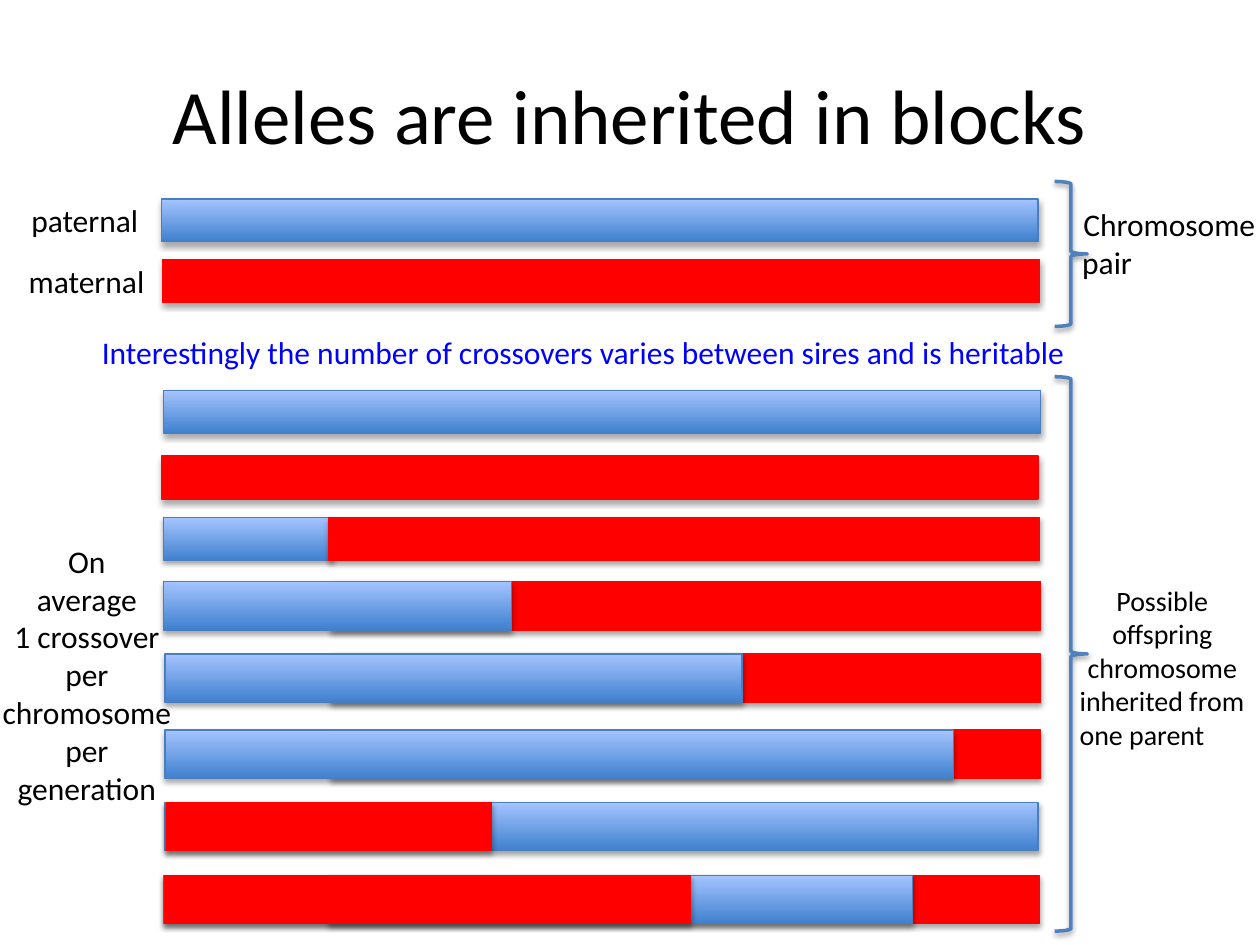
from lxml import etree
from pptx import Presentation
from pptx import util as u
from pptx.dml.color import RGBColor
from pptx.enum import shapes, text
from pptx.oxml.ns import qn

LEFT, CENTER = text.PP_ALIGN.LEFT, text.PP_ALIGN.CENTER
PATERNAL, MATERNAL = "paternal", "maternal"


def colour(hex_code):
    return RGBColor.from_string(hex_code)


class Diagram:
    """Style and current slide; lengths are in a grid of 100 columns by 75 rows."""

    font = "Calibri"
    ink, note = "000000", "0000FF"
    red, blue_edge, brace_line = "FF0000", "4B7EBC", "4F81BD"
    blue_blend = ("3F80CE", "A4C4FF")

    def __init__(self, deck):
        self.column = deck.slide_width / 100
        self.row = deck.slide_height / 75
        self.slide = deck.slides.add_slide(deck.slide_layouts[6])

    def place(self, left, top, width, height):
        return (round(left * self.column), round(top * self.row),
                round(width * self.column), round(height * self.row))

    def cast_shadow(self, shape, opacity, distance):
        """Replace the theme shadow with a soft one falling straight down."""
        shape.shadow.inherit = False
        effects = shape._element.spPr.find(qn("a:effectLst"))
        outer = etree.SubElement(
            effects, qn("a:outerShdw"), blurRad=str(u.Pt(3.1)),
            dist=str(u.Pt(distance)), dir="5400000", rotWithShape="0")
        black = etree.SubElement(outer, qn("a:srgbClr"), val="000000")
        etree.SubElement(black, qn("a:alpha"), val=str(opacity * 1000))

    def segment(self, parent, left, top, width, height):
        bar = self.slide.shapes.add_shape(
            shapes.MSO_SHAPE.RECTANGLE, *self.place(left, top, width, height))
        if parent == PATERNAL:
            bar.fill.gradient()
            bar.fill.gradient_angle = 90
            for stop, shade in zip(bar.fill.gradient_stops, self.blue_blend):
                stop.color.rgb = colour(shade)
            edge = self.blue_edge
        else:
            bar.fill.solid()
            bar.fill.fore_color.rgb = colour(self.red)
            edge = self.red
        bar.line.color.rgb = colour(edge)
        bar.line.width = u.Pt(0.75)
        self.cast_shadow(bar, 35, 1.8)

    def chromosome(self, top, height, *segments):
        for parent, left, width in segments:
            self.segment(parent, left, top, width, height)

    def brace(self, top, height):
        brace = self.slide.shapes.add_shape(
            shapes.MSO_SHAPE.RIGHT_BRACE, *self.place(83.7, top, 2.6, height))
        brace.fill.background()
        brace.line.color.rgb = colour(self.brace_line)
        brace.line.width = u.Pt(2)
        self.cast_shadow(brace, 38, 1.6)

    def words(self, box, lines, size=18, ink=ink):
        """Write (line, alignment) pairs in an unwrapped box."""
        label = self.slide.shapes.add_textbox(*self.place(*box))
        frame = label.text_frame
        frame.word_wrap = False
        frame.auto_size = text.MSO_AUTO_SIZE.SHAPE_TO_FIT_TEXT
        frame.text = "\n".join(line for line, _ in lines)
        for paragraph, (_, alignment) in zip(frame.paragraphs, lines):
            paragraph.alignment = alignment
            paragraph.font.name = self.font
            paragraph.font.size = u.Pt(size)
            paragraph.font.color.rgb = colour(ink)
        return frame

    def title(self, wording):
        frame = self.words((5, 2.8, 90, 12.5), [(wording, CENTER)], size=44)
        frame.auto_size = text.MSO_AUTO_SIZE.NONE
        frame.word_wrap = True
        frame.vertical_anchor = text.MSO_ANCHOR.MIDDLE


def main():
    deck = Presentation()
    deck.slide_width, deck.slide_height = u.Inches(10), u.Inches(7.5)
    diagram = Diagram(deck)
    diagram.title("Alleles are inherited in blocks")

    full, long_arm = 69.6, 56.4
    chromosomes = [
        (15.8, 3.4, (PATERNAL, 12.8, full)),
        (20.6, 3.4, (MATERNAL, 12.9, full)),
        (31, 3.4, (PATERNAL, 13, full)),
        (36.2, 3.4, (MATERNAL, 12.8, full)),
        (41.1, 3.4, (PATERNAL, 13, 13.5), (MATERNAL, 26.1, long_arm)),
        (46.15, 3.85, (MATERNAL, 26.2, long_arm), (PATERNAL, 13, 27.6)),
        (51.9, 3.85, (MATERNAL, 26.2, long_arm), (PATERNAL, 13.1, 45.8)),
        (57.95, 3.85, (MATERNAL, 26.2, long_arm), (PATERNAL, 13.1, 62.6)),
        (63.7, 3.8, (PATERNAL, 13.1, 69.3), (MATERNAL, 13.2, 25.8)),
        (69.5, 3.8, (MATERNAL, 26.1, long_arm), (PATERNAL, 13, 59.4),
         (MATERNAL, 13.1, 41.7)),
    ]
    for top, height, *segments in chromosomes:
        diagram.chromosome(top, height, *segments)
    diagram.brace(14.4, 11.5)
    diagram.brace(29.9, 44)

    diagram.words((1.5, 15.5, 10.7, 4), [("paternal", LEFT)])
    diagram.words((1.3, 20.3, 11.3, 4), [("maternal", LEFT)])
    diagram.words((84.9, 15.8, 15.8, 7.1),
                  [("Chromosome", CENTER), ("pair", LEFT)])
    diagram.words((84.7, 45.8, 15.1, 14.5),
                  [("Possible", CENTER), ("offspring", CENTER),
                   ("chromosome", CENTER), ("inherited from", LEFT),
                   ("one parent", LEFT)], size=16)
    diagram.words((7.1, 25.9, 82, 4),
                  [("Interestingly the number of crossovers varies between "
                    "sires and is heritable", LEFT)], ink=diagram.note)
    crossover_note = ("On", "average", "1 crossover", "per", "chromosome",
                      "per", "generation")
    diagram.words((-0.9, 42.5, 15.6, 22.2),
                  [(line, CENTER) for line in crossover_note])
    deck.save("out.pptx")


if __name__ == "__main__":
    main()
